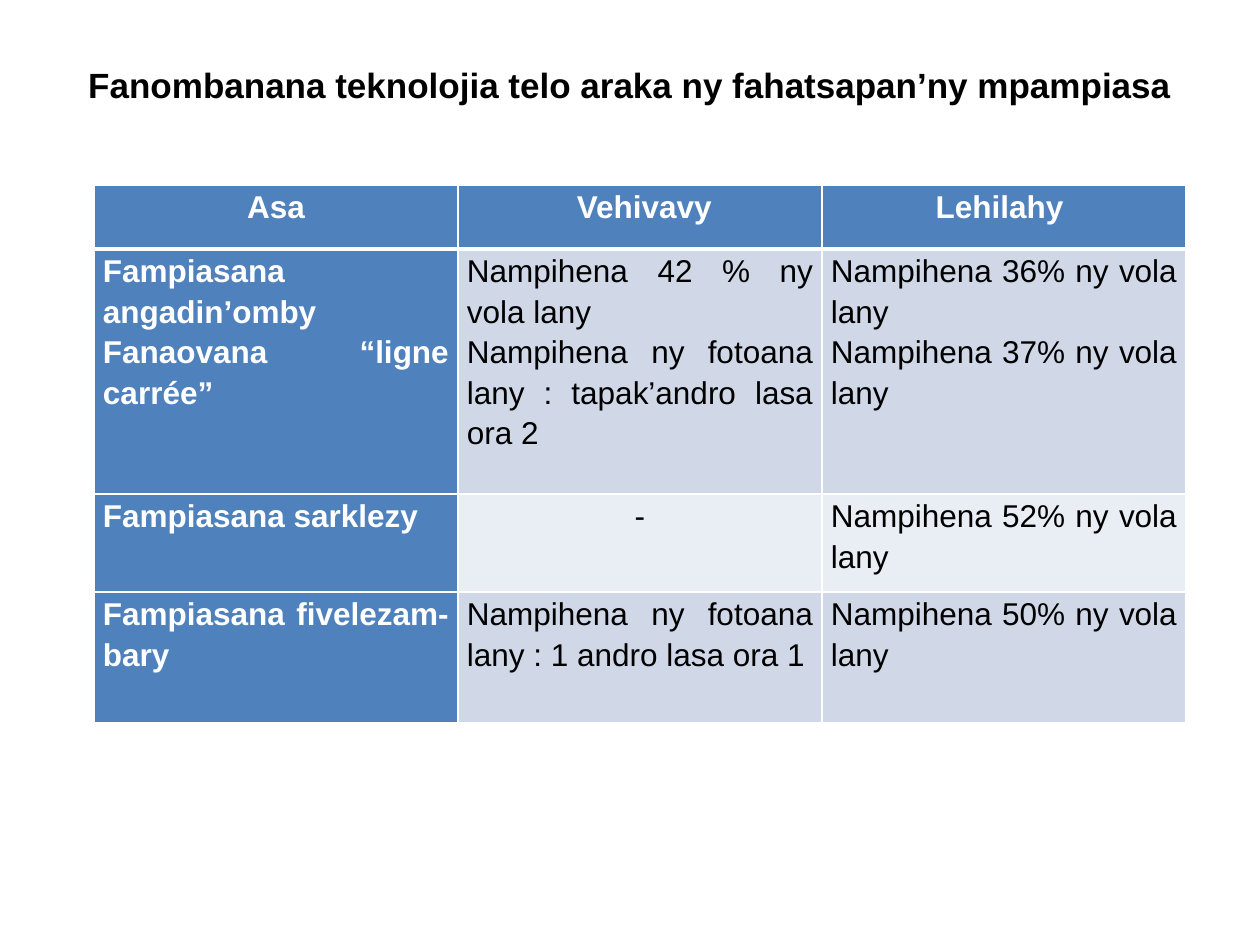
from dataclasses import dataclass

from lxml.etree import SubElement
from pptx import Presentation
from pptx.dml.color import RGBColor as RGB
from pptx.enum.text import MSO_ANCHOR as ANCHOR, PP_ALIGN as ALIGN
from pptx.oxml.ns import qn
from pptx.util import Pt

PX = 914400 / 126


@dataclass(frozen=True)
class Theme:
    font: str = "Arial"
    title_size: int = 20
    body_size: int = 18
    dark_text: str = "000000"
    light_text: str = "FFFFFF"
    heading_fill: str = "4F81BD"
    bands: tuple = ("D0D8E8", "E9EDF4")
    border: str = "FFFFFF"
    thin: int = 1
    thick: int = 3


theme = Theme()


def px(length):
    return round(length * PX)


def write(frame, lines, size, color, bold, **paragraph_format):
    frame.text = "\n".join(lines)
    font_format = {"name": theme.font, "size": Pt(size), "bold": bold}
    for paragraph in frame.paragraphs:
        for name, value in paragraph_format.items():
            setattr(paragraph, name, value)
        for run in paragraph.runs:
            for name, value in font_format.items():
                setattr(run.font, name, value)
            run.font.color.rgb = RGB.from_string(color)


prs = Presentation()
prs.slide_width, prs.slide_height = px(1260), px(945)
slide = prs.slides.add_slide(prs.slide_layouts[5])

# Title, lifted above the middle of its box by a deep bottom margin
title = slide.shapes.title
title_box = {"left": 63, "top": 45, "width": 1134, "height": 118}
for name, value in title_box.items():
    setattr(title, name, px(value))
write(title.text_frame, ["Fanombanana teknolojia telo araka ny fahatsapan’ny mpampiasa"],
      theme.title_size, theme.dark_text, True, alignment=ALIGN.CENTER)
title.text_frame.vertical_anchor = ANCHOR.MIDDLE
title.text_frame.margin_bottom = px(46)

# Comparison by task: women and men
rows = [
    [["Asa"], [" Vehivavy"], ["Lehilahy "]],
    [["Fampiasana angadin’omby", "Fanaovana “ligne carrée”"],
     ["Nampihena 42 % ny vola lany",
      "Nampihena ny fotoana lany : tapak’andro lasa ora 2"],
     ["Nampihena 36% ny vola lany", "Nampihena 37% ny vola lany"]],
    [["Fampiasana sarklezy"], ["-"], ["Nampihena 52% ny vola lany"]],
    [["Fampiasana fivelezam-bary"],
     ["Nampihena ny fotoana lany : 1 andro lasa ora 1"],
     ["Nampihena 50% ny vola lany"]],
]
row_heights = [64, 245, 98, 131]
column_width = 364
cell_format = {"margin_left": px(9), "margin_right": px(9), "margin_top": 0,
               "margin_bottom": 0, "vertical_anchor": ANCHOR.TOP}

table = slide.shapes.add_table(len(rows), 3, px(94), px(185),
                               px(3 * column_width), px(sum(row_heights))).table
for column in table.columns:
    column.width = px(column_width)

for r, (row, height) in enumerate(zip(rows, row_heights)):
    table.rows[r].height = px(height)
    for c, lines in enumerate(row):
        cell = table.cell(r, c)
        heading = r == 0 or c == 0
        centered = r == 0 or lines == ["-"]
        for name, value in cell_format.items():
            setattr(cell, name, value)
        write(cell.text_frame, lines, theme.body_size,
              theme.light_text if heading else theme.dark_text, heading,
              alignment=ALIGN.CENTER if centered else ALIGN.JUSTIFY,
              line_spacing=1.15)

        properties = cell._tc.get_or_add_tcPr()
        for side in "LRTB":
            under_header = (r, side) in {(0, "B"), (1, "T")}
            weight = theme.thick if under_header else theme.thin
            line = SubElement(properties, qn(f"a:ln{side}"), w=str(Pt(weight)))
            SubElement(SubElement(line, qn("a:solidFill")), qn("a:srgbClr"),
                       val=theme.border)
        cell.fill.solid()
        cell.fill.fore_color.rgb = RGB.from_string(
            theme.heading_fill if heading else theme.bands[(r - 1) % 2])

prs.save("out.pptx")
